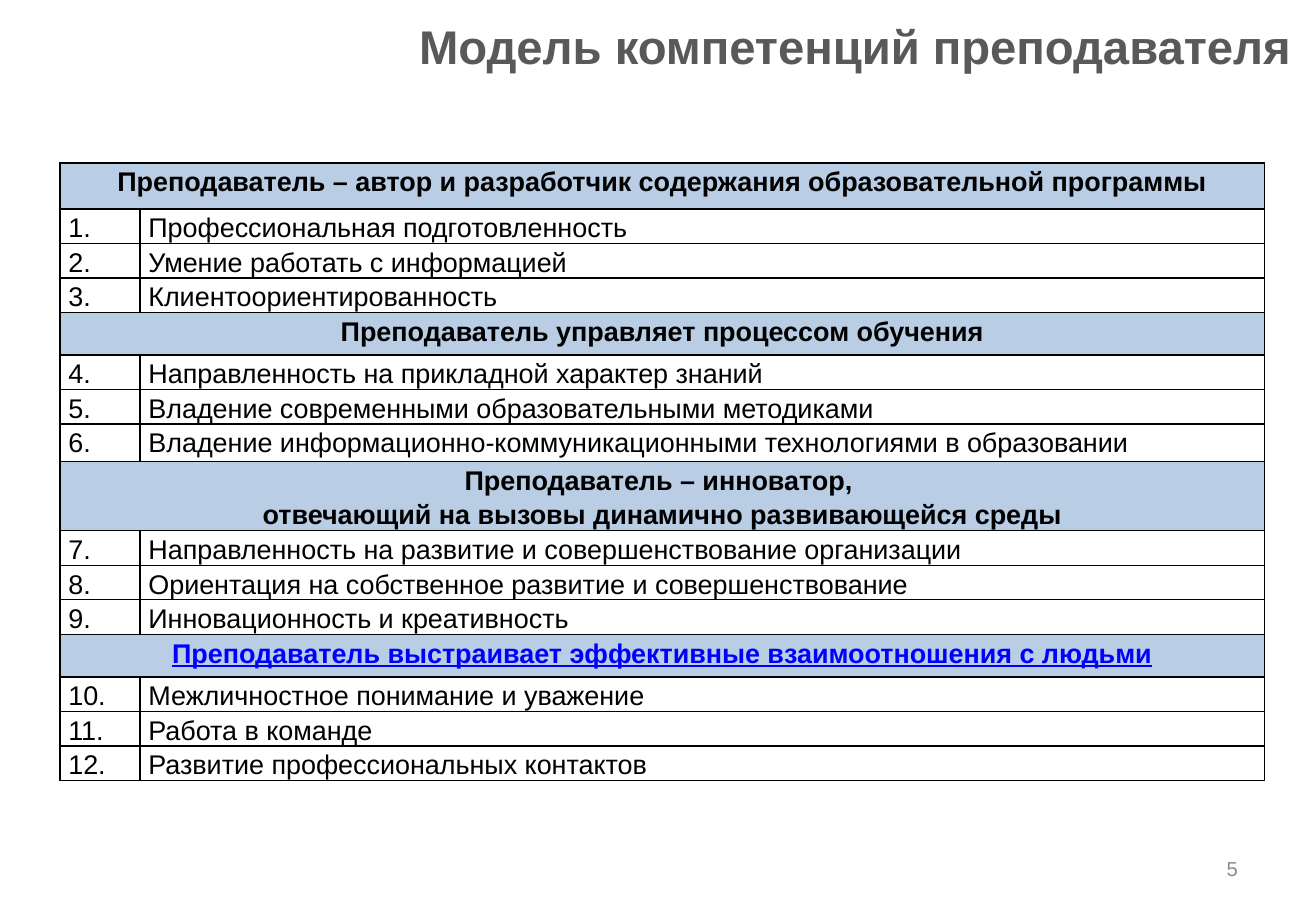
from dataclasses import dataclass

from lxml import etree
from pptx import Presentation
from pptx.dml.color import RGBColor
from pptx.enum.text import MSO_ANCHOR, MSO_AUTO_SIZE, PP_ALIGN
from pptx.oxml.ns import qn
from pptx.util import Pt

LEFT, CENTER, RIGHT = PP_ALIGN.LEFT, PP_ALIGN.CENTER, PP_ALIGN.RIGHT
MIDDLE, TOP = MSO_ANCHOR.MIDDLE, MSO_ANCHOR.TOP
NO_AUTOFIT = MSO_AUTO_SIZE.NONE
TITLE_ONLY_LAYOUT = 5
FONT = "Arial"
BLACK, WHITE, GREY, PALE_GREY = "000000", "FFFFFF", "595959", "8C8C8C"
HEADING_FILL, LINK_BLUE = "B9CDE5", "0000FF"
ROW_HEIGHT = 18
NUMBER_INDENT = 27.36
COLUMN_WIDTHS = (47.5, 666.7)


@dataclass
class Section:
    heading: str
    competencies: list[str]
    heading_height: float
    last_height: float = ROW_HEIGHT
    color: str = BLACK
    underline: bool = False


SECTIONS = [
    Section("Преподаватель – автор и разработчик содержания образовательной программы",
            ["Профессиональная подготовленность",
             "Умение работать с информацией",
             "Клиентоориентированность"], 27.4),
    Section("Преподаватель управляет процессом обучения",
            ["Направленность на прикладной характер знаний",
             "Владение современными образовательными методиками",
             "Владение информационно-коммуникационными технологиями в образовании"],
            25.2, last_height=22.3),
    Section("Преподаватель – инноватор, \nотвечающий на вызовы динамично развивающейся среды",
            ["Направленность на развитие и совершенствование организации",
             "Ориентация на собственное развитие и совершенствование",
             "Инновационность и креативность"], 36.7),
    Section("Преподаватель выстраивает эффективные взаимоотношения с людьми",
            ["Межличностное понимание и уважение",
             "Работа в команде",
             "Развитие профессиональных контактов"],
            25.2, color=LINK_BLUE, underline=True),
]


def set_color(target, hex_color: str) -> None:
    """Colour a font, or a fill that is already solid."""
    color = target.color if hasattr(target, "color") else target.fore_color
    color.rgb = RGBColor.from_string(hex_color)


def format_paragraph(paragraph, size: float, color: str, alignment,
                     bold: bool = False, underline: bool = False) -> None:
    paragraph.alignment = alignment
    font = paragraph.font
    font.name, font.size, font.bold, font.underline = FONT, Pt(size), bold, underline
    set_color(font, color)


def place(shape, left: float, top: float, width: float, height: float) -> None:
    shape.left, shape.top = Pt(left), Pt(top)
    shape.width, shape.height = Pt(width), Pt(height)


def add_borders(cell) -> None:
    properties = cell._tc.get_or_add_tcPr()
    for position, side in enumerate(("a:lnL", "a:lnR", "a:lnT", "a:lnB")):
        line = etree.Element(qn(side), w=str(Pt(1)))
        fill = etree.SubElement(line, qn("a:solidFill"))
        etree.SubElement(fill, qn("a:srgbClr"), val=BLACK)
        properties.insert(position, line)


def fill_cell(cell, text: str, fill: str, alignment=LEFT, color: str = BLACK,
              bold: bool = False, underline: bool = False, indent: float = 0) -> None:
    cell.margin_left = cell.margin_right = Pt(5)
    cell.margin_top = cell.margin_bottom = Pt(0)
    cell.vertical_anchor = TOP
    cell.text = text
    for paragraph in cell.text_frame.paragraphs:
        paragraph.line_spacing = 1.15
        if indent:
            properties = paragraph._p.get_or_add_pPr()
            properties.set("marL", str(Pt(indent)))
            properties.set("indent", str(-Pt(indent)))
        format_paragraph(paragraph, 16, color, alignment, bold, underline)
    cell.fill.solid()
    set_color(cell.fill, fill)
    add_borders(cell)


def add_competency_table(slide) -> None:
    row_count = sum(1 + len(section.competencies) for section in SECTIONS)
    table = slide.shapes.add_table(row_count, len(COLUMN_WIDTHS), Pt(35.5), Pt(96.5),
                                   Pt(sum(COLUMN_WIDTHS)), Pt(row_count * ROW_HEIGHT)).table
    table.first_row = table.horz_banding = False
    for column, width in zip(table.columns, COLUMN_WIDTHS):
        column.width = Pt(width)

    row = number = 0
    for section in SECTIONS:
        # Section heading across both columns
        heading = table.cell(row, 0)
        heading.merge(table.cell(row, 1))
        fill_cell(heading, section.heading, HEADING_FILL, CENTER, section.color,
                  bold=True, underline=section.underline)
        add_borders(table.cell(row, 1))
        table.rows[row].height = Pt(section.heading_height)
        row += 1
        # Numbered competencies
        for competency in section.competencies:
            number += 1
            fill_cell(table.cell(row, 0), f"{number}.", WHITE, indent=NUMBER_INDENT)
            fill_cell(table.cell(row, 1), competency, WHITE)
            table.rows[row].height = Pt(ROW_HEIGHT)
            row += 1
        table.rows[row - 1].height = Pt(section.last_height)


def main() -> None:
    presentation = Presentation()
    presentation.slide_width, presentation.slide_height = Pt(780), Pt(540)
    slide = presentation.slides.add_slide(presentation.slide_layouts[TITLE_ONLY_LAYOUT])

    # Title
    title = slide.shapes.title
    place(title, 10, 3.5, 770, 47)
    title.text_frame.text = "Модель компетенций преподавателя "
    title.text_frame.auto_size = NO_AUTOFIT
    title.text_frame.vertical_anchor = MIDDLE
    format_paragraph(title.text_frame.paragraphs[0], 28, GREY, RIGHT, bold=True)

    add_competency_table(slide)

    # Slide number
    slide_number = slide.shapes.add_textbox(Pt(558.7), Pt(500.5), Pt(182), Pt(28.75))
    slide_number.text_frame.word_wrap = True
    slide_number.text_frame.vertical_anchor = MIDDLE
    slide_number.text_frame.text = "5"
    format_paragraph(slide_number.text_frame.paragraphs[0], 12, PALE_GREY, RIGHT)

    presentation.save("out.pptx")


if __name__ == "__main__":
    main()
